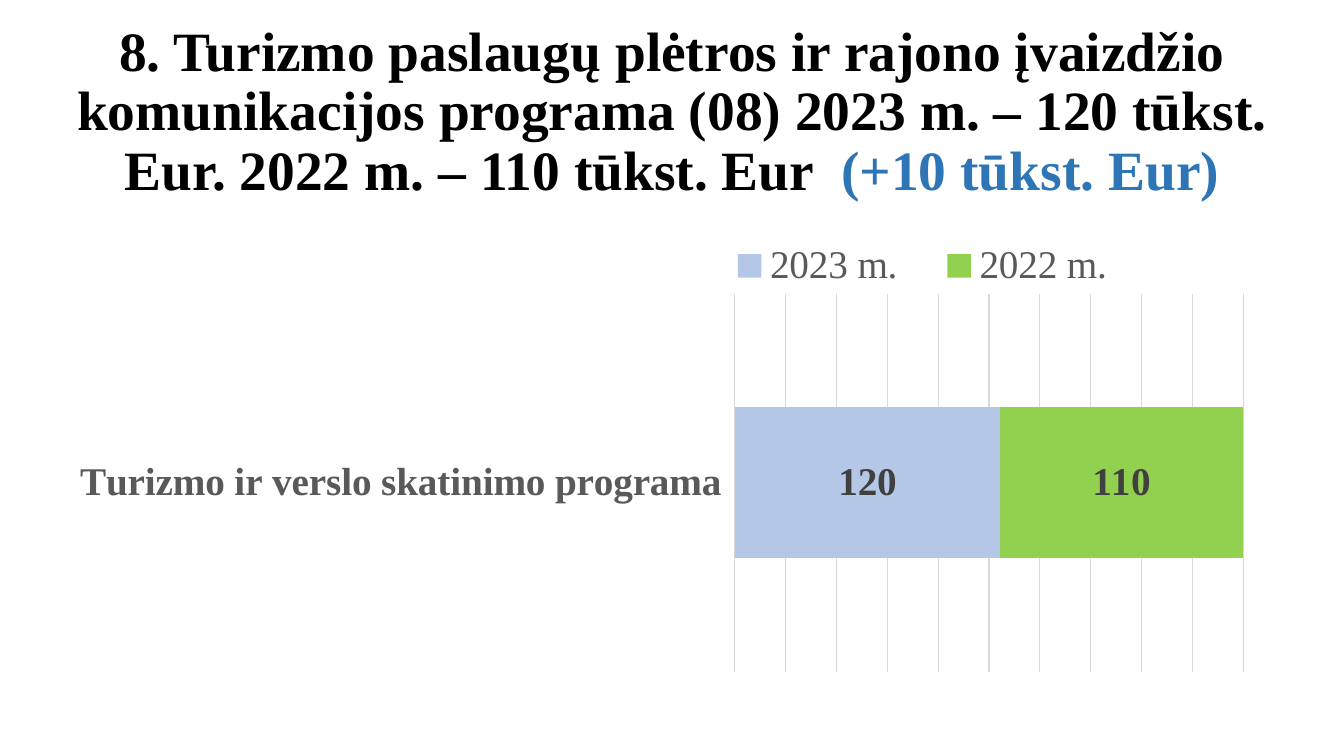
"""Build the tourism programme slide with its 2023 and 2022 budget bar."""
from lxml.etree import SubElement
from pptx import Presentation
from pptx.chart.data import CategoryChartData
from pptx.dml.color import RGBColor
from pptx.enum.chart import XL_CHART_TYPE, XL_LABEL_POSITION, XL_LEGEND_POSITION, XL_TICK_LABEL_POSITION, XL_TICK_MARK
from pptx.enum.text import MSO_ANCHOR, PP_ALIGN
from pptx.oxml.ns import qn
from pptx.util import Inches, Pt


def style(font, size, color, bold=False):
    font.name = "Times New Roman"
    font.size = Pt(size)
    font.bold = bold
    font.color.rgb = RGBColor.from_string(color)


def place(part, index, inner, **shares):
    for old in part.findall(qn("c:layout")):
        part.remove(old)
    layout = SubElement(part, qn("c:layout"))
    manual = SubElement(layout, qn("c:manualLayout"))
    if inner:
        SubElement(manual, qn("c:layoutTarget")).set("val", "inner")
    for mode in ("xMode", "yMode"):
        SubElement(manual, qn("c:" + mode)).set("val", "edge")
    for key, share in shares.items():
        SubElement(manual, qn("c:" + key)).set("val", str(share))
    part.insert(index, layout)


deck = Presentation()
deck.slide_width, deck.slide_height = Inches(13.33), Inches(7.5)
slide = deck.slides.add_slide(deck.slide_layouts[6])

heading = slide.shapes.add_textbox(Inches(0.14), Inches(0.36), Inches(13.05), Inches(1.52)).text_frame
heading.word_wrap = True
heading.vertical_anchor = MSO_ANCHOR.MIDDLE
title = heading.paragraphs[0]
title.alignment = PP_ALIGN.CENTER
title.line_spacing = 0.9
for words, color in (
    ("8. Turizmo paslaugų plėtros ir rajono įvaizdžio komunikacijos programa (08) "
     "2023 m. – 120 tūkst. Eur. 2022 m. – 110 tūkst. Eur  ", "000000"),
    ("(+10 tūkst. Eur)", "2E75B6"),
):
    run = title.add_run()
    run.text = words
    style(run.font, 39.6, color, bold=True)

budget = CategoryChartData()
budget.categories = ["Turizmo ir verslo skatinimo programa "]
budget.add_series("2023 m. ", [120])
budget.add_series("2022 m.", [110])
chart = slide.shapes.add_chart(
    XL_CHART_TYPE.BAR_STACKED_100, Inches(0.57), Inches(2.18), Inches(12), Inches(4.58), budget
).chart
style(chart.font, 28, "000000")
chart.has_title = False

chart.has_legend = True
chart.legend.position = XL_LEGEND_POSITION.TOP
chart.legend.include_in_layout = False
style(chart.legend.font, 28, "595959")

programme_axis = chart.category_axis
programme_axis.major_tick_mark = XL_TICK_MARK.NONE
programme_axis.tick_label_position = XL_TICK_LABEL_POSITION.NEXT_TO_AXIS
style(programme_axis.tick_labels.font, 28, "595959", bold=True)

share_axis = chart.value_axis
share_axis.visible = False
share_axis.minimum_scale, share_axis.maximum_scale, share_axis.major_unit = 0, 1, 0.1
share_axis.has_major_gridlines = True
for line in (programme_axis.format.line, share_axis.major_gridlines.format.line):
    line.color.rgb = RGBColor.from_string("D9D9D9")
    line.width = Pt(0.75)

bars = chart.plots[0]
bars.gap_width, bars.overlap = 150, 100
bars.vary_by_categories = False
for year, color in zip(bars.series, ("B4C7E7", "92D050")):
    year.format.fill.solid()
    year.format.fill.fore_color.rgb = RGBColor.from_string(color)
    labels = year.data_labels
    labels.show_value = True
    labels.position = XL_LABEL_POSITION.CENTER
    style(labels.font, 28, "404040", bold=True)

plot_area = chart.element.find(".//" + qn("c:plotArea"))
legend = chart.element.find(".//" + qn("c:legend"))
place(plot_area, 0, True, x=0.56, y=0.16, w=0.42, h=0.82)
place(legend, 1, False, x=0.54, y=0.04, w=0.35, h=0.12)

deck.save("out.pptx")
